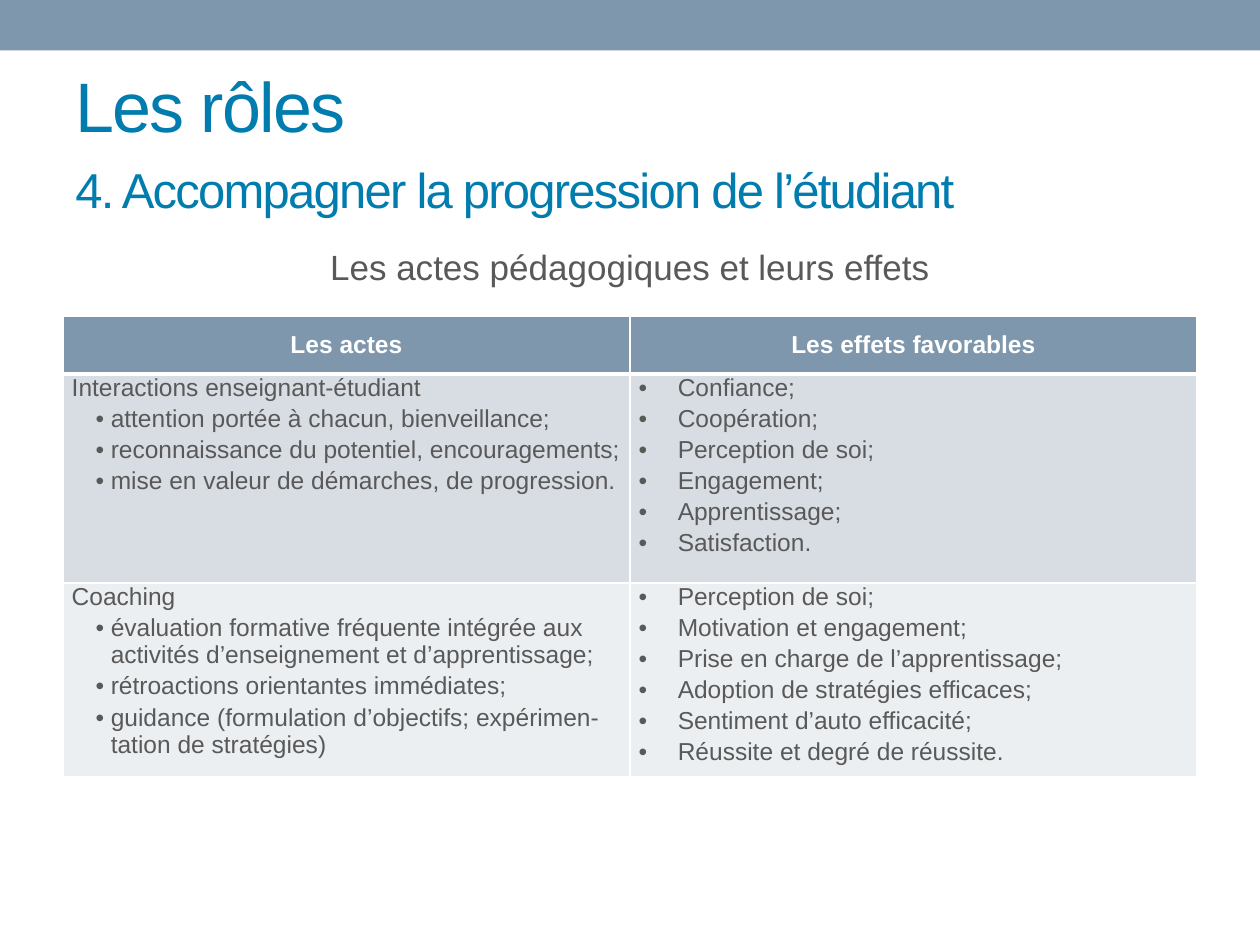
from dataclasses import dataclass

from lxml.etree import SubElement
from pptx import Presentation
from pptx.dml.color import RGBColor as RGB
from pptx.enum.shapes import MSO_SHAPE as SHAPE
from pptx.enum.text import MSO_ANCHOR as ANCHOR, PP_ALIGN as ALIGN
from pptx.oxml.ns import qn
from pptx.util import Pt


@dataclass(frozen=True)
class Theme:
    font: str = "Arial"
    accent: str = "7E97AD"
    heading: str = "007CAF"
    text: str = "595959"
    white: str = "FFFFFF"
    bands: tuple = ("D8DDE3", "ECEFF1")
    title: int = 40
    subtitle: int = 28
    caption: int = 20
    body: int = 14


T = Theme()
LEFT, WIDTH = 36, 648
ACT_HANG, EFFECT_HANG = 8.6, 22.3

HEADERS = ("Les actes", "Les effets favorables")
# Each row: height, heading of the acts, acts, effects
ROWS = (
    (119.5, "Interactions enseignant-étudiant",
     ("attention portée à chacun, bienveillance;",
      "reconnaissance du potentiel, encouragements;",
      "mise en valeur de démarches, de progression."),
     ("Confiance;", "Coopération;", "Perception de soi;",
      "Engagement;", "Apprentissage;", "Satisfaction.")),
    (104.5, "Coaching",
     ("évaluation formative fréquente intégrée aux activités "
      "d’enseignement et d’apprentissage;",
      "rétroactions orientantes immédiates;",
      "guidance (formulation d’objectifs; expérimen- tation de stratégies)"),
     ("Perception de soi;", "Motivation et engagement;",
      "Prise en charge de l’apprentissage;",
      "Adoption de stratégies efficaces;",
      "Sentiment d’auto efficacité;", "Réussite et degré de réussite.")),
)


def apply(obj, **values):
    for name, value in values.items():
        setattr(obj, name, value)


def write(p, text, size, color, bold=False, spacing=None):
    r = p.add_run()
    r.text = text
    apply(r.font, name=T.font, size=Pt(size), bold=bold)
    r.font.color.rgb = RGB.from_string(color)
    if spacing is not None:
        r.font._element.set("spc", str(spacing * 100))


def add_bullet(p, hang):
    pPr = p._p.get_or_add_pPr()
    pPr.set("marL", str(Pt(EFFECT_HANG)))
    pPr.set("indent", str(-Pt(hang)))
    SubElement(pPr, qn("a:buFont"), typeface=T.font)
    SubElement(pPr, qn("a:buChar"), char="•")


def add_band(s):
    band = s.shapes.add_shape(SHAPE.RECTANGLE, 0, 0, Pt(720), Pt(28.8))
    band.shadow.inherit = False
    band.fill.solid()
    band.fill.fore_color.rgb = RGB.from_string(T.accent)
    band.line.fill.background()


def set_heading(sp, text, top, height, size):
    apply(sp, left=Pt(LEFT), top=Pt(top), width=Pt(WIDTH), height=Pt(height))
    tf = sp.text_frame
    apply(tf, word_wrap=True, vertical_anchor=ANCHOR.MIDDLE)
    p = tf.paragraphs[0]
    p.alignment = ALIGN.LEFT
    write(p, text, size, T.heading, spacing=-1)


def add_grid(s, top, heights, columns):
    frame = s.shapes.add_table(len(heights), columns, Pt(LEFT), Pt(top),
                               Pt(WIDTH), Pt(sum(heights)))
    table = frame.table
    apply(table, first_row=False, horz_banding=False)
    for row, height in zip(table.rows, heights):
        row.height = Pt(height)
    return table


def style_cell(cell, fill=None, top=1, bottom=1):
    tcPr = cell._tc.get_or_add_tcPr()
    for side, width in zip("LRTB", (1, 1, top, bottom)):
        ln = SubElement(tcPr, qn(f"a:ln{side}"), w=str(Pt(width)))
        SubElement(SubElement(ln, qn("a:solidFill")), qn("a:srgbClr"), val=T.white)
    if fill is None:
        cell.fill.background()
        return
    cell.fill.solid()
    cell.fill.fore_color.rgb = RGB.from_string(fill)
    apply(cell, margin_left=Pt(5), margin_right=Pt(5), margin_top=0, margin_bottom=0)


def centre_text(cell, text, size, color, bold=False, before=0):
    cell.vertical_anchor = ANCHOR.MIDDLE
    p = cell.text_frame.paragraphs[0]
    apply(p, alignment=ALIGN.CENTER, space_before=Pt(before))
    write(p, text, size, color, bold)


def fill_list(cell, items, hang, heading=None):
    tf = cell.text_frame
    lines = [(heading, False)] if heading else []
    lines += [(item, True) for item in items]
    for i, (text, bulleted) in enumerate(lines):
        p = tf.add_paragraph() if i else tf.paragraphs[0]
        p.space_before = Pt(2)
        if bulleted:
            add_bullet(p, hang)
        write(p, text, T.body, T.text)


def add_caption(s):
    cell = add_grid(s, 137.5, [30], 1).cell(0, 0)
    style_cell(cell, bottom=3)
    centre_text(cell, "Les actes pédagogiques et leurs effets", T.caption, T.text)


def add_acts_table(s):
    table = add_grid(s, 180.7, [33, *(row[0] for row in ROWS)], len(HEADERS))
    for col, text in enumerate(HEADERS):
        cell = table.cell(0, col)
        style_cell(cell, T.accent, bottom=3)
        centre_text(cell, text, T.body, T.white, bold=True, before=6)
    for i, (_, heading, acts, effects) in enumerate(ROWS):
        left, right = table.rows[i + 1].cells
        for cell in (left, right):
            style_cell(cell, T.bands[i], top=1 if i else 3)
        fill_list(left, acts, ACT_HANG, heading)
        fill_list(right, effects, EFFECT_HANG)


def main():
    prs = Presentation()
    apply(prs, slide_width=Pt(720), slide_height=Pt(540))
    s = prs.slides.add_slide(prs.slide_layouts[5])

    # Top band and headings
    add_band(s)
    set_heading(s.shapes.title, "Les rôles", 41.8, 35.3, T.title)
    set_heading(s.shapes.add_textbox(0, 0, 0, 0),
                "4. Accompagner la progression de l’étudiant", 88.6, 38.2, T.subtitle)

    # Caption and table of acts and effects
    add_caption(s)
    add_acts_table(s)
    prs.save("out.pptx")


if __name__ == "__main__":
    main()
